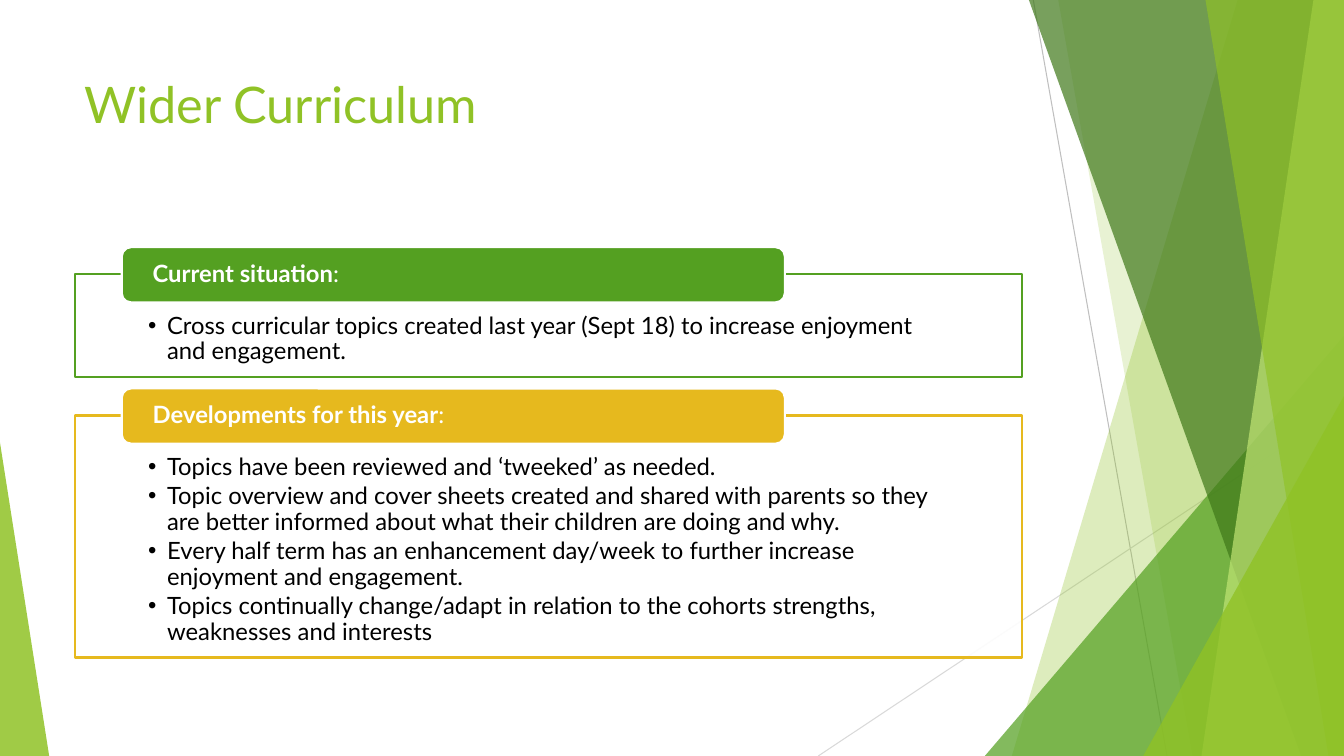
from dataclasses import dataclass

from pptx import Presentation
from pptx import util as u
from pptx.dml.color import RGBColor
from pptx.enum import shapes, text
from pptx.oxml import ns, xmlchemy

WIDTH, HEIGHT = 33.87, 19.05


@dataclass(frozen=True)
class Theme:
    font: str = "Lato"
    title_size: float = 36
    text_size: float = 17
    white: str = "FFFFFF"
    black: str = "000000"
    lime: str = "90C226"
    pale_lime: str = "C0E474"
    green: str = "54A021"
    dark_green: str = "3F7819"
    gold: str = "E6B91E"
    grey: str = "BFBFBF"
    light_grey: str = "D9D9D9"


class SlideBuilder:
    def __init__(self, slide, theme):
        self.slide = slide
        self.theme = theme

    def paint(self, part, colour, opacity=100, outline=None):
        part.shadow.inherit = False
        part.fill.solid()
        part.fill.fore_color.rgb = RGBColor.from_string(colour)
        if opacity < 100:
            tint = part.element.spPr.find(ns.qn("a:solidFill"))[0]
            alpha = xmlchemy.OxmlElement("a:alpha")
            alpha.set("val", str(opacity * 1000))
            tint.append(alpha)
        if outline:
            part.line.color.rgb = RGBColor.from_string(outline)
            part.line.width = u.Pt(1.5)
        else:
            part.line.fill.background()

    def place(self, part, left, top, width, height):
        part.left, part.top = u.Cm(left), u.Cm(top)
        part.width, part.height = u.Cm(width), u.Cm(height)
        part.element.getparent().append(part.element)

    def frame(self, part, insets, anchor):
        frame = part.text_frame
        frame.word_wrap = True
        frame.auto_size = text.MSO_AUTO_SIZE.NONE
        frame.vertical_anchor = anchor
        (frame.margin_left, frame.margin_top,
         frame.margin_right, frame.margin_bottom) = map(u.Cm, insets)
        return frame

    def style(self, paragraph, size, colour, spacing=1.0, after=0):
        paragraph.alignment = text.PP_ALIGN.LEFT
        paragraph.line_spacing = spacing
        paragraph.space_before = u.Pt(0)
        paragraph.space_after = u.Pt(after)
        for run in paragraph.runs:
            run.font.name = self.theme.font
            run.font.size = u.Pt(size)
            run.font.color.rgb = RGBColor.from_string(colour)

    def ray(self, start, end, colour):
        ray = self.slide.shapes.add_connector(
            shapes.MSO_CONNECTOR.STRAIGHT, *map(u.Cm, (*start, *end)))
        ray.line.color.rgb = RGBColor.from_string(colour)
        ray.line.width = u.Pt(0.75)
        ray.element.spPr.append(xmlchemy.OxmlElement("a:effectLst"))

    def facet(self, top_x, bottom_x, colour, opacity):
        outline = self.slide.shapes.build_freeform(u.Cm(top_x), 0)
        corners = [(WIDTH, 0), (WIDTH, HEIGHT), (bottom_x, HEIGHT)]
        outline.add_line_segments([(u.Cm(x), u.Cm(y)) for x, y in corners])
        self.paint(outline.convert_to_shape(), colour, opacity)

    def wedge(self, left, top, width, apex, colour, opacity):
        wedge = self.slide.shapes.add_shape(
            shapes.MSO_SHAPE.ISOSCELES_TRIANGLE,
            *map(u.Cm, (left, top, width, HEIGHT - top)))
        wedge.adjustments[0] = apex
        self.paint(wedge, colour, opacity)

    def title(self, wording):
        heading = self.slide.shapes.title
        self.place(heading, 1.88, 1.7, 23.88, 3.66)
        frame = self.frame(heading, (0.25, 0.13, 0.25, 0.13), text.MSO_ANCHOR.TOP)
        frame.text = wording
        self.style(frame.paragraphs[0], self.theme.title_size, self.theme.lime)

    def panel(self, index, top, height, colour, points):
        panel = self.slide.placeholders[index]
        self.place(panel, 1.88, top, 23.88, height)
        self.paint(panel, self.theme.white, 90, colour)
        frame = self.frame(panel, (1.85, 0.99, 1.85, 0.33), text.MSO_ANCHOR.TOP)
        frame.text = "\n".join(points)
        for paragraph in frame.paragraphs:
            self.bullet(paragraph)
            self.style(paragraph, self.theme.text_size, self.theme.black, 0.9, 2.55)

    def bullet(self, paragraph):
        properties = paragraph._p.get_or_add_pPr()
        properties.set("marL", str(u.Cm(0.48)))
        properties.set("indent", str(-u.Cm(0.48)))
        mark = xmlchemy.OxmlElement("a:buChar")
        mark.set("char", "•")
        properties.append(mark)

    def tab(self, panel_top, colour, wording):
        tab = self.slide.shapes.add_shape(
            shapes.MSO_SHAPE.ROUNDED_RECTANGLE,
            *map(u.Cm, (3.07, panel_top - 0.68, 16.71, 1.39)))
        self.paint(tab, colour, outline=self.theme.white)
        frame = self.frame(tab, (0.71, 0, 0.71, 0), text.MSO_ANCHOR.MIDDLE)
        label = frame.paragraphs[0]
        label.text = wording
        label.runs[0].font.bold = True
        label.add_run().text = ":"
        self.style(label, self.theme.text_size, self.theme.white, 0.9)


def main():
    theme = Theme()
    deck = Presentation()
    deck.slide_width, deck.slide_height = u.Cm(WIDTH), u.Cm(HEIGHT)
    builder = SlideBuilder(deck.slides.add_slide(deck.slide_layouts[3]), theme)

    builder.ray((26.04, 0), (29.41, HEIGHT), theme.grey)
    builder.ray((WIDTH, 10.24), (20.62, HEIGHT), theme.light_grey)
    builder.facet(31.19, 25.5, theme.lime, 30)
    builder.facet(26.67, 30.05, theme.lime, 20)
    builder.wedge(24.82, 8.46, 9.05, 1, theme.green, 72)
    builder.facet(25.93, 32.79, theme.dark_green, 70)
    builder.facet(33.1, 30.28, theme.pale_lime, 70)
    builder.facet(30.38, 33.48, theme.lime, 65)
    builder.wedge(28.81, 9.98, 5.06, 1, theme.lime, 80)
    builder.wedge(0, 11.15, 1.24, 0, theme.lime, 85)

    builder.title("Wider Curriculum")
    sections = [
        (6.91, 2.59, theme.green, "Current situation", [
            "Cross curricular topics created last year (Sept 18) to increase "
            "enjoyment and engagement.",
        ]),
        (10.47, 6.1, theme.gold, "Developments for this year", [
            "Topics have been reviewed and ‘tweeked’ as needed.",
            "Topic overview and cover sheets created and shared with parents so "
            "they are better informed about what their children are doing and why.",
            "Every half term has an enhancement day/week to further increase "
            "enjoyment and engagement.",
            "Topics continually change/adapt in relation to the cohorts strengths, "
            "weaknesses and interests",
        ]),
    ]
    for index, (top, height, colour, heading, points) in enumerate(sections, 1):
        builder.panel(index, top, height, colour, points)
        builder.tab(top, colour, heading)

    deck.save("out.pptx")


if __name__ == "__main__":
    main()
